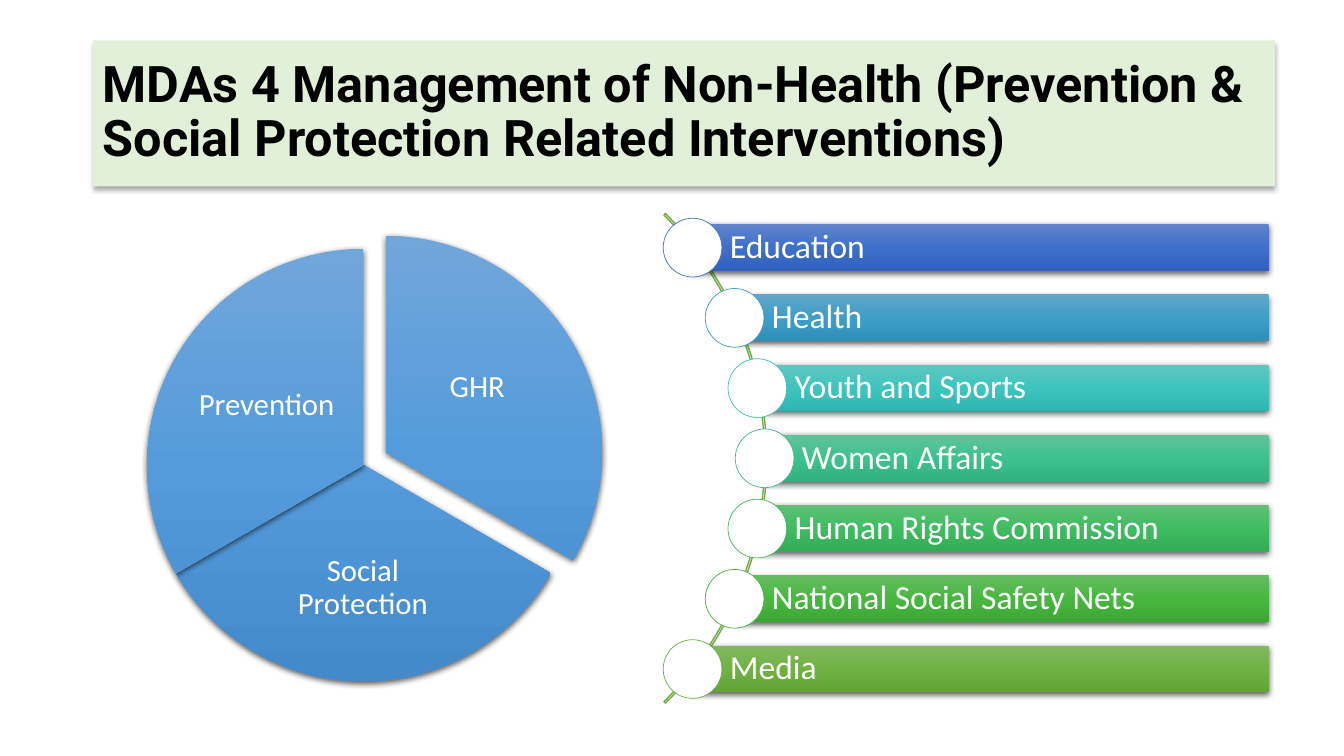
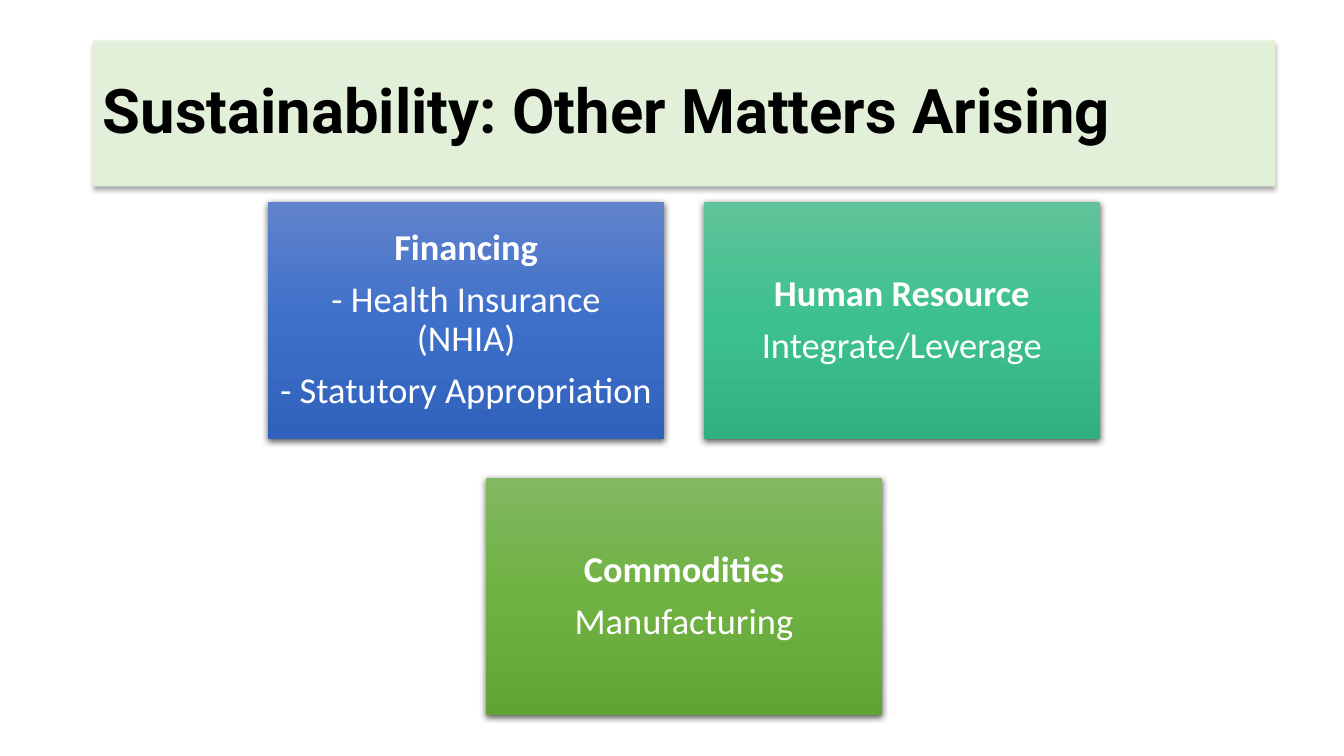
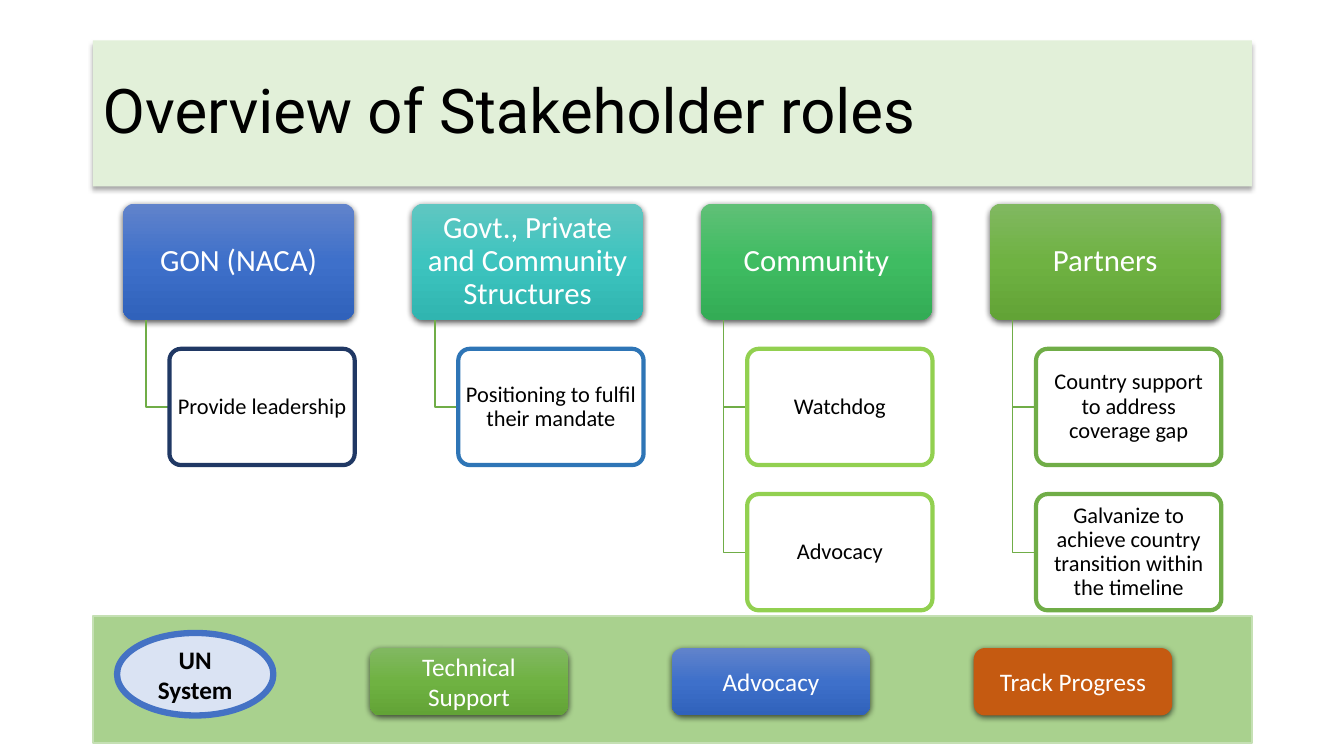
import copy
import math

from lxml import etree
from pptx import Presentation
from pptx import util as u
from pptx.dml.color import RGBColor
from pptx.enum import shapes, text
from pptx.oxml import ns

Cm, Pt = u.Cm, u.Pt
SHAPE = shapes.MSO_SHAPE
ALIGN = text.PP_ALIGN

# Colours
WHITE = RGBColor(0xFF, 0xFF, 0xFF)
BLACK = RGBColor(0x00, 0x00, 0x00)
TITLE_GREEN = RGBColor(0xE2, 0xF0, 0xD9)
STRIP_GREEN = RGBColor(0xA9, 0xD1, 0x8E)
STRIP_EDGE = RGBColor(0xC5, 0xE0, 0xB4)
LINE_GREEN = RGBColor(0x70, 0xAD, 0x47)
LINE_BLUE = RGBColor(0x44, 0x72, 0xC4)
LIME = RGBColor(0x92, 0xD0, 0x50)
NAVY = RGBColor(0x20, 0x38, 0x64)
MID_BLUE = RGBColor(0x2E, 0x75, 0xB6)
PALE_BLUE = RGBColor(0xDA, 0xE3, 0xF3)
RUST = RGBColor(0xC5, 0x5A, 0x11)

# Gradients, top to bottom
BLUE, CYAN, TEAL, SEA, EMERALD, LEAF, OLIVE, SKY = [
    [RGBColor.from_string(stop) for stop in stops.split()]
    for stops in (
        "6183CB 3E70CA 3062BB",
        "61A6C8 3D9EC7 308FB8",
        "60C6C1 3DC4BF 30B5B0",
        "60C39A 3DC18F 31B080",
        "60C077 3FBC62 33AC55",
        "65BC61 48B740 3CA735",
        "81B861 6FB242 62A336",
        "71A6DB 559BDB 448ACA",
    )
]

# Shadows: opacity %, blur pt, distance pt
TITLE_SHADOW = (32, 3.5, 2.2)
BLOCK_SHADOW = (63, 4.5, 1.5)


def style(shape, fill=None, line=None, line_width=1, shadow=None):
    """Set fill (None, a colour or a three-stop gradient), line and shadow."""
    if fill is None:
        shape.fill.background()
    elif isinstance(fill, RGBColor):
        shape.fill.solid()
        shape.fill.fore_color.rgb = fill
    else:
        shape.fill.gradient()
        shape.fill.gradient_angle = 270
        stop_list = shape.element.spPr.find(".//" + ns.qn("a:gsLst"))
        stop_list.insert(1, copy.deepcopy(stop_list[0]))
        for stop, color, position in zip(shape.fill.gradient_stops, fill, (0, 0.5, 1)):
            stop.color.rgb = color
            stop.position = position
    if line is None:
        shape.line.fill.background()
    else:
        shape.line.color.rgb = line
        shape.line.width = Pt(line_width)
    shape.shadow.inherit = False
    if shadow:
        opacity, blur, distance = shadow
        effects = shape.element.spPr.find(ns.qn("a:effectLst"))
        outer = etree.SubElement(
            effects, ns.qn("a:outerShdw"), blurRad=str(Pt(blur)),
            dist=str(Pt(distance)), dir="5400000", algn="ctr", rotWithShape="0")
        color = etree.SubElement(outer, ns.qn("a:srgbClr"), val=str(BLACK))
        etree.SubElement(color, ns.qn("a:alpha"), val=str(opacity * 1000))


def write(box, lines, size, color=WHITE, font="Calibri", bold=False,
          align=ALIGN.CENTER, margins=(0.25, 0.13), left=None, spacing=0.9):
    """Fill a box with paragraphs; margins are side and top/bottom in cm."""
    frame = box.text_frame
    frame.word_wrap = True
    frame.vertical_anchor = text.MSO_ANCHOR.MIDDLE
    side, edge = margins
    frame.margin_left = Cm(side if left is None else left)
    frame.margin_right = Cm(side)
    frame.margin_top = frame.margin_bottom = Cm(edge)
    frame.text = "\n".join(lines)
    for number, para in enumerate(frame.paragraphs):
        para.alignment = align
        para.line_spacing = spacing
        para.space_before = Pt(0.35 * size if number else 0)
        for span in para.runs:
            span.font.name = font
            span.font.size = Pt(size)
            span.font.bold = bold
            span.font.color.rgb = color


deck = Presentation()
deck.slide_width, deck.slide_height = Cm(33.87), Cm(19.05)

# Title bands
pages = []
for title, size, bold, width in (
    ("MDAs 4 Management of Non-Health (Prevention & Social Protection "
     "Related Interventions)", 36, True, 29.79),
    ("Sustainability: Other Matters Arising", 44, True, 29.79),
    ("Overview of Stakeholder roles", 44, False, 29.21),
):
    page = deck.slides.add_slide(deck.slide_layouts[6])
    band = page.shapes.add_shape(SHAPE.RECTANGLE, Cm(2.34), Cm(1.02), Cm(width), Cm(3.68))
    style(band, TITLE_GREEN, shadow=TITLE_SHADOW)
    write(band, [title], size, BLACK, "Roboto", bold, ALIGN.LEFT)
    pages.append(page)
agencies, matters, roles = pages

# Slide 1: bars fanned along an arc
ARC_X, ARC_Y, ARC_SIZE = 10.6, 11.55, 17.45
BAR_RADIUS, BAR_PITCH, BAR_HEIGHT, BAR_RIGHT, DOT = 8.67, 1.77, 1.18, 31.97, 1.48
arc = agencies.shapes.add_shape(
    SHAPE.BLOCK_ARC, Cm(ARC_X - ARC_SIZE / 2), Cm(ARC_Y - ARC_SIZE / 2),
    Cm(ARC_SIZE), Cm(ARC_SIZE))
for index, value in enumerate((189, 27, 0.003)):
    arc.adjustments[index] = value
style(arc, line=LINE_GREEN)

bars = (
    ("Education", BLUE, "4472C4"),
    ("Health", CYAN, "449BC1"),
    ("Youth and Sports", TEAL, "43BEB9"),
    ("Women Affairs", SEA, "43BB8D"),
    ("Human Rights Commission", EMERALD, "45B664"),
    ("National Social Safety Nets", LEAF, "4CB146"),
    ("Media", OLIVE, "70AD47"),
)
for row, (label, gradient, edge) in enumerate(bars):
    rise = (row - 3) * BAR_PITCH
    x, y = ARC_X + math.sqrt(BAR_RADIUS ** 2 - rise ** 2), ARC_Y + rise
    bar = agencies.shapes.add_shape(
        SHAPE.RECTANGLE, Cm(x), Cm(y - BAR_HEIGHT / 2), Cm(BAR_RIGHT - x), Cm(BAR_HEIGHT))
    style(bar, gradient, shadow=BLOCK_SHADOW)
    write(bar, [label], 24, align=ALIGN.LEFT, margins=(0.17, 0.17), left=0.94)
    dot = agencies.shapes.add_shape(
        SHAPE.OVAL, Cm(x - DOT / 2), Cm(y - DOT / 2), Cm(DOT), Cm(DOT))
    style(dot, WHITE, RGBColor.from_string(edge), 0.5)

# Slide 1: three pie slices, the first pulled out
slices = (
    ("GHR", (4.27, 5.94), (162, 18), (10.19, 7.95, 3.68, 3.63)),
    ("Social Protection", (3.71, 6.27), (18, 90), (6.68, 13.13, 4.93, 3.38)),
    ("Prevention", (3.71, 6.27), (90, 162), (4.88, 8.41, 3.68, 3.63)),
)
for label, (x, y), angles, label_frame in slices:
    wedge = agencies.shapes.add_shape(SHAPE.PIE, Cm(x), Cm(y), Cm(10.9), Cm(10.9))
    wedge.adjustments[0], wedge.adjustments[1] = angles
    style(wedge, SKY, shadow=BLOCK_SHADOW)
    box = agencies.shapes.add_textbox(*map(Cm, label_frame))
    write(box, [label], 22, margins=(0.08, 0.08))

# Slide 2: cards, heading in bold
cards = (
    (6.76, 5.08, BLUE,
     ["Financing", "- Health Insurance\v(NHIA)", "- Statutory Appropriation"]),
    (17.74, 5.08, SEA, ["Human Resource", "Integrate/Leverage"]),
    (12.25, 12.04, OLIVE, ["Commodities", "Manufacturing"]),
)
for x, y, gradient, lines in cards:
    card = matters.shapes.add_shape(SHAPE.RECTANGLE, Cm(x), Cm(y), Cm(9.98), Cm(5.99))
    style(card, gradient, shadow=BLOCK_SHADOW)
    write(card, lines, 26, margins=(0.27, 0.27))
    card.text_frame.paragraphs[0].runs[0].font.bold = True

# Slide 3: stakeholder columns with their roles
HEAD_TOP, BOX_HEIGHT, ROLE_PITCH = 5.13, 2.93, 3.66
columns = (
    ("GON (NACA)", BLUE, NAVY, ["Provide leadership"]),
    ("Govt., Private and Community Structures", TEAL, MID_BLUE,
     ["Positioning to fulfil their mandate"]),
    ("Community", EMERALD, LIME, ["Watchdog", "Advocacy"]),
    ("Partners", OLIVE, LINE_GREEN,
     ["Country support to address coverage gap",
      "Galvanize to achieve country transition within the timeline"]),
)
for column, (name, gradient, edge, duties) in enumerate(columns):
    x = 3.1 + column * 7.28
    head = roles.shapes.add_shape(
        SHAPE.ROUNDED_RECTANGLE, Cm(x), Cm(HEAD_TOP), Cm(5.83), Cm(BOX_HEIGHT))
    head.adjustments[0] = 0.1
    style(head, gradient, shadow=BLOCK_SHADOW)
    write(head, [name], 22, margins=(0.12, 0.08))
    for row, duty in enumerate(duties, 1):
        top = HEAD_TOP + row * ROLE_PITCH
        middle = Cm(top + BOX_HEIGHT / 2)
        outline = roles.shapes.build_freeform(Cm(x + 0.58), Cm(HEAD_TOP + BOX_HEIGHT))
        outline.add_line_segments(
            [(Cm(x + 0.58), middle), (Cm(x + 1.17), middle)], close=False)
        style(outline.convert_to_shape(), line=LINE_GREEN)
        role = roles.shapes.add_shape(
            SHAPE.ROUNDED_RECTANGLE, Cm(x + 1.17), Cm(top), Cm(4.67), Cm(BOX_HEIGHT))
        role.adjustments[0] = 0.1
        style(role, WHITE, edge, 3)
        write(role, [duty], 16, BLACK, margins=(0.08, 0.05))

# Slide 3: bottom strip
strip = roles.shapes.add_shape(SHAPE.RECTANGLE, Cm(2.34), Cm(15.52), Cm(29.21), Cm(3.2))
style(strip, STRIP_GREEN, STRIP_EDGE)
system = roles.shapes.add_shape(SHAPE.OVAL, Cm(2.95), Cm(15.95), Cm(3.94), Cm(2.08))
style(system, PALE_BLUE, LINE_BLUE, 4.5)
write(system, ["UN System"], 18, BLACK, bold=True, spacing=1.0)
for index, (label, fill) in enumerate((
    ("Technical Support", OLIVE), ("Advocacy", BLUE), ("Track Progress", RUST),
)):
    pill = roles.shapes.add_shape(
        SHAPE.ROUNDED_RECTANGLE, Cm(9.32 + index * 7.61), Cm(16.33), Cm(5), Cm(1.7))
    style(pill, fill, shadow=BLOCK_SHADOW)
    write(pill, [label], 18, spacing=1.0)

deck.save("out.pptx")
